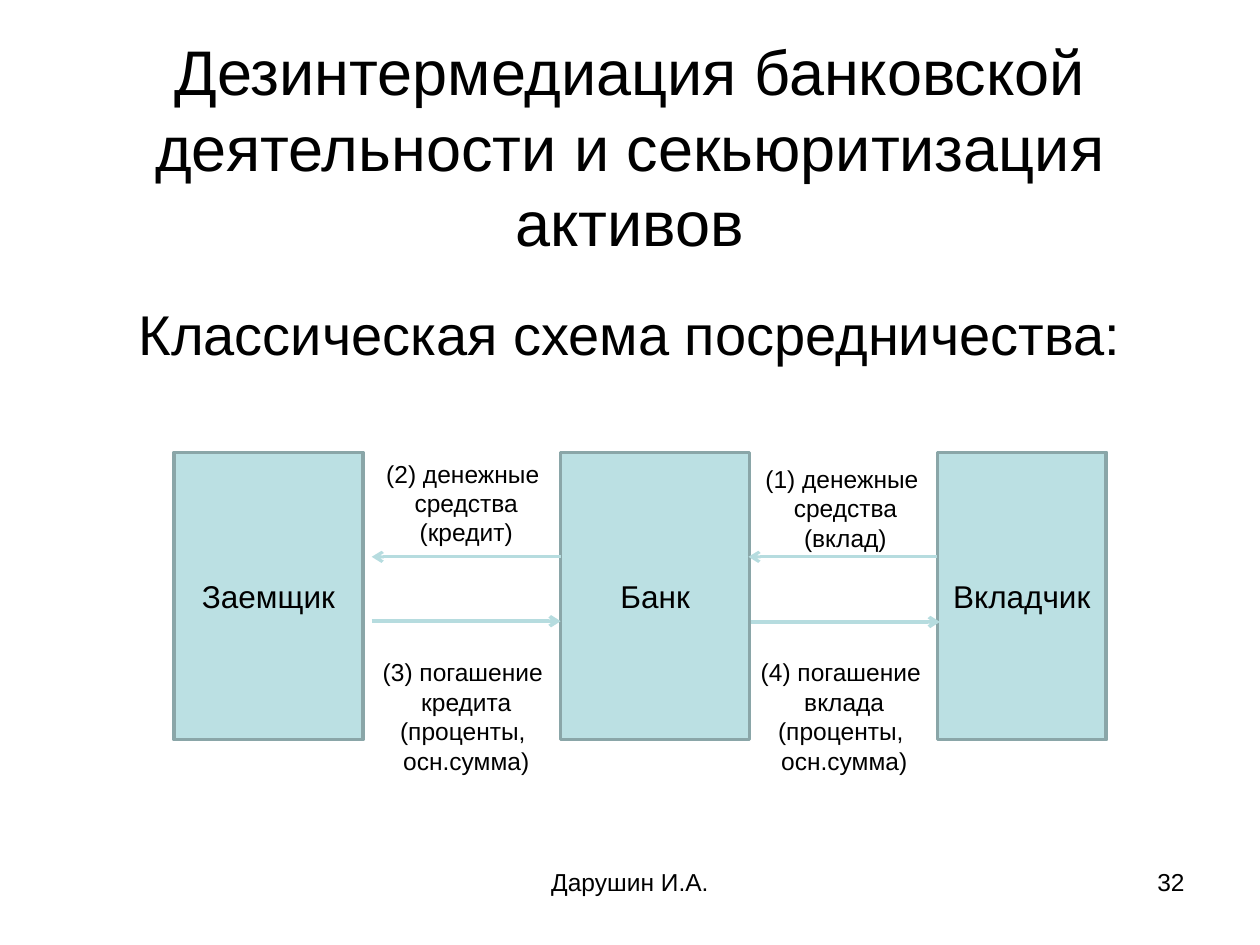
from dataclasses import dataclass

from lxml import etree
from pptx import Presentation
from pptx.dml.color import RGBColor
from pptx.enum.shapes import MSO_CONNECTOR, MSO_SHAPE
from pptx.enum.text import MSO_ANCHOR as Anchor, PP_ALIGN as Align
from pptx.oxml.ns import qn
from pptx.util import Pt


@dataclass(frozen=True)
class Theme:
    font: str = "Arial"
    text: RGBColor = RGBColor(0x00, 0x00, 0x00)
    box_fill: RGBColor = RGBColor(0xBB, 0xE0, 0xE3)
    box_line: RGBColor = RGBColor(0x8A, 0xA6, 0xA8)
    arrow: RGBColor = RGBColor(0xB6, 0xDC, 0xDF)
    title_size: int = 36
    subtitle_size: int = 32
    party_size: int = 18
    small_size: int = 14


THEME = Theme()


def write(shape, lines, size, align=Align.CENTER, anchor=Anchor.TOP, wrap=True):
    """Fill a shape with one paragraph per line in the theme font."""
    frame = shape.text_frame
    frame.text = "\n".join(lines)
    frame.word_wrap = wrap
    frame.vertical_anchor = anchor
    for paragraph in frame.paragraphs:
        paragraph.alignment = align
        paragraph.font.name = THEME.font
        paragraph.font.size = Pt(size)
        paragraph.font.color.rgb = THEME.text


def add_text(left, top, width, height, lines, size, **layout):
    box = slide.shapes.add_textbox(Pt(left), Pt(top), Pt(width), Pt(height))
    write(box, lines, size, **layout)
    return box


prs = Presentation()
prs.slide_width, prs.slide_height = Pt(720), Pt(540)
slide = prs.slides.add_slide(prs.slide_layouts[6])

# Headings and footer
add_text(36, 21.6, 648, 123.8,
         ["Дезинтермедиация банковской деятельности и секьюритизация активов"],
         THEME.title_size, anchor=Anchor.MIDDLE)
subtitle = add_text(36, 167.8, 648, 314.6,
                    ["Классическая схема посредничества:"], THEME.subtitle_size)
subtitle.text_frame.paragraphs[0].space_before = Pt(6.4)
add_text(246, 491.8, 228, 37.4, ["Дарушин И.А."], THEME.small_size)
add_text(516, 491.8, 168, 37.4, ["32"], THEME.small_size, align=Align.RIGHT)

# Parties to the scheme
for left, width, party in [
    (99.4, 108, "Заемщик"),
    (320.4, 108, "Банк"),
    (535.7, 96.5, "Вкладчик"),
]:
    box = slide.shapes.add_shape(
        MSO_SHAPE.RECTANGLE, Pt(left), Pt(258.5), Pt(width), Pt(164.2))
    box.shadow.inherit = False
    box.fill.solid()
    box.fill.fore_color.rgb = THEME.box_fill
    box.line.color.rgb = THEME.box_line
    box.line.width = Pt(2)
    write(box, [party], THEME.party_size, anchor=Anchor.MIDDLE)

# Money flows
for start, end, y, weight in [
    (535.7, 427.7, 318.2, 1.75),
    (320.4, 212.4, 318.2, 1.75),
    (212.4, 320.4, 355, 2),
    (429.1, 537.1, 355.4, 2),
]:
    flow = slide.shapes.add_connector(
        MSO_CONNECTOR.STRAIGHT, Pt(start), Pt(y), Pt(end), Pt(y))
    flow.line.color.rgb = THEME.arrow
    flow.line.width = Pt(weight)
    etree.SubElement(flow.line._get_or_add_ln(), qn("a:tailEnd"), type="arrow")
    etree.SubElement(flow._element.spPr, qn("a:effectLst"))

# Flow labels
for left, top, width, height, lines in [
    (429.8, 261.4, 106.6, 58.3, ["(1) денежные ", "средства", "(вклад)"]),
    (213.1, 258.5, 106.6, 58.3, ["(2) денежные ", "средства", "(кредит)"]),
    (211, 372.2, 110.9, 74.9,
     ["(3) погашение ", "кредита", "(проценты, ", "осн.сумма)"]),
    (427, 372.2, 110.9, 74.9,
     ["(4) погашение ", "вклада", "(проценты, ", "осн.сумма)"]),
]:
    add_text(left, top, width, height, lines, THEME.small_size, wrap=False)

prs.save("out.pptx")
